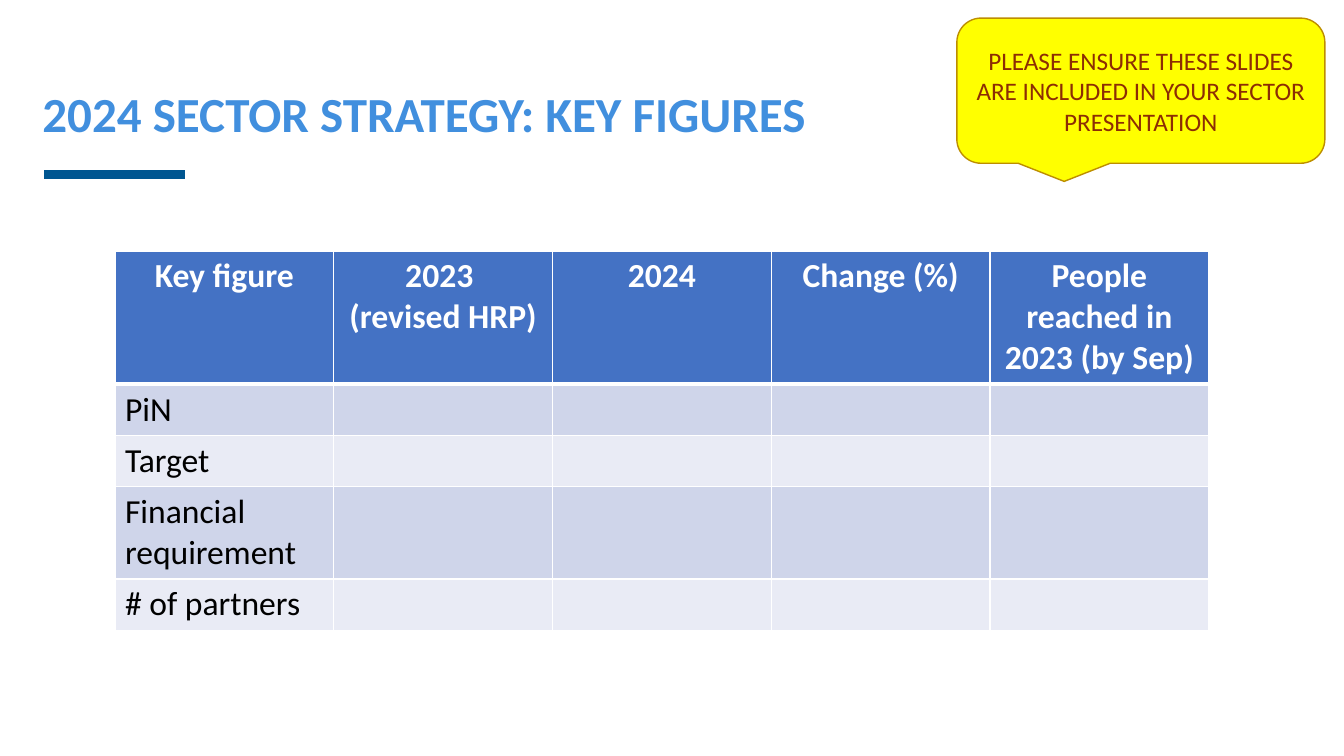
from lxml.etree import SubElement
from pptx import Presentation
from pptx.dml.color import RGBColor
from pptx.enum.shapes import MSO_CONNECTOR, MSO_SHAPE
from pptx.enum.text import MSO_ANCHOR, MSO_AUTO_SIZE, PP_ALIGN
from pptx.oxml import parse_xml
from pptx.oxml.ns import nsdecls, qn
from pptx.util import Inches, Pt

# Content
TITLE = "2024 SECTOR STRATEGY: KEY FIGURES"
REMINDER = "PLEASE ENSURE THESE SLIDES ARE INCLUDED IN YOUR SECTOR PRESENTATION"
HEADERS = ["Key figure", "2023 \n(revised HRP)", "2024", "Change (%)",
           "People reached in 2023 (by Sep)"]
FIGURES = ["PiN", "Target", "Financial requirement", "# of partners"]

# Layout and formats
COL_WIDTH = 2.17
ROW_HEIGHTS = [1.31, 0.51, 0.51, 0.91, 0.51]
HEADER_FILL, BANDS = "4472C4", ["CFD5EA", "E9EBF5"]
TITLE_FONT = {"size": Pt(35), "bold": True}
REMINDER_FONT = {"size": Pt(18)}
HEADER_FONT = {"size": Pt(24), "bold": True}
BODY_FONT = {"size": Pt(24), "bold": False}


def rgb(value):
    return RGBColor.from_string(value)


def write(tf, text, font, color, align=PP_ALIGN.LEFT):
    tf.text = text
    for p in tf.paragraphs:
        p.alignment = align
        for r in p.runs:
            r.font.name = "Calibri"
            r.font.color.rgb = rgb(color)
            for name, value in font.items():
                setattr(r.font, name, value)


def set_borders(cell, bottom):
    tcPr = cell._tc.get_or_add_tcPr()
    for side, width in (("L", 1), ("R", 1), ("T", 1), ("B", bottom)):
        tcPr.append(parse_xml(
            f'<a:ln{side} {nsdecls("a")} w="{Pt(width)}"><a:solidFill>'
            f'<a:srgbClr val="FFFFFF"/></a:solidFill></a:ln{side}>'))


prs = Presentation()
prs.slide_width, prs.slide_height = Inches(13.33), Inches(7.5)
s = prs.slides.add_slide(prs.slide_layouts[5])

# Title
title = s.shapes.title
title.left, title.top = Inches(0.42), Inches(0.71)
title.width, title.height = Inches(8.62), Inches(0.9)
tf = title.text_frame
write(tf, TITLE, TITLE_FONT, "418FDE")
tf.margin_left = 0
tf.vertical_anchor = MSO_ANCHOR.MIDDLE
tf.auto_size = MSO_AUTO_SIZE.NONE
tf.paragraphs[0].line_spacing = 0.9

# Rule under the title
rule = s.shapes.add_connector(MSO_CONNECTOR.STRAIGHT, Inches(0.44), Inches(1.73),
                              Inches(1.83), Inches(1.73))
rule.line.color.rgb = rgb("005691")
rule.line.width = Pt(6)
SubElement(rule._element.spPr, qn("a:effectLst"))

# Reminder callout
sp = s.shapes.add_shape(MSO_SHAPE.ROUNDED_RECTANGULAR_CALLOUT, Inches(9.49),
                        Inches(0.18), Inches(3.65), Inches(1.44))
sp.shadow.inherit = False
sp.fill.solid()
sp.fill.fore_color.rgb = rgb("FFFF00")
sp.line.color.rgb = rgb("BD8E00")
sp.line.width = Pt(1)
sp.text_frame.word_wrap = True
sp.text_frame.vertical_anchor = MSO_ANCHOR.MIDDLE
write(sp.text_frame, REMINDER, REMINDER_FONT, "8C2D04", PP_ALIGN.CENTER)

# Key figures table
rows = [HEADERS] + [[figure] + [""] * (len(HEADERS) - 1) for figure in FIGURES]
table = s.shapes.add_table(len(rows), len(HEADERS), Inches(1.14), Inches(2.49),
                           Inches(COL_WIDTH * len(HEADERS)),
                           Inches(sum(ROW_HEIGHTS))).table
for col in table.columns:
    col.width = Inches(COL_WIDTH)
for i, (row, height) in enumerate(zip(rows, ROW_HEIGHTS)):
    table.rows[i].height = Inches(height)
    is_header = i == 0
    for j, text in enumerate(row):
        cell = table.cell(i, j)
        set_borders(cell, 3 if is_header else 1)
        cell.fill.solid()
        cell.fill.fore_color.rgb = rgb(HEADER_FILL if is_header else BANDS[(i - 1) % 2])
        if is_header:
            write(cell.text_frame, text, HEADER_FONT, "FFFFFF", PP_ALIGN.CENTER)
        elif text:
            write(cell.text_frame, text, BODY_FONT, "000000")

prs.save("out.pptx")
